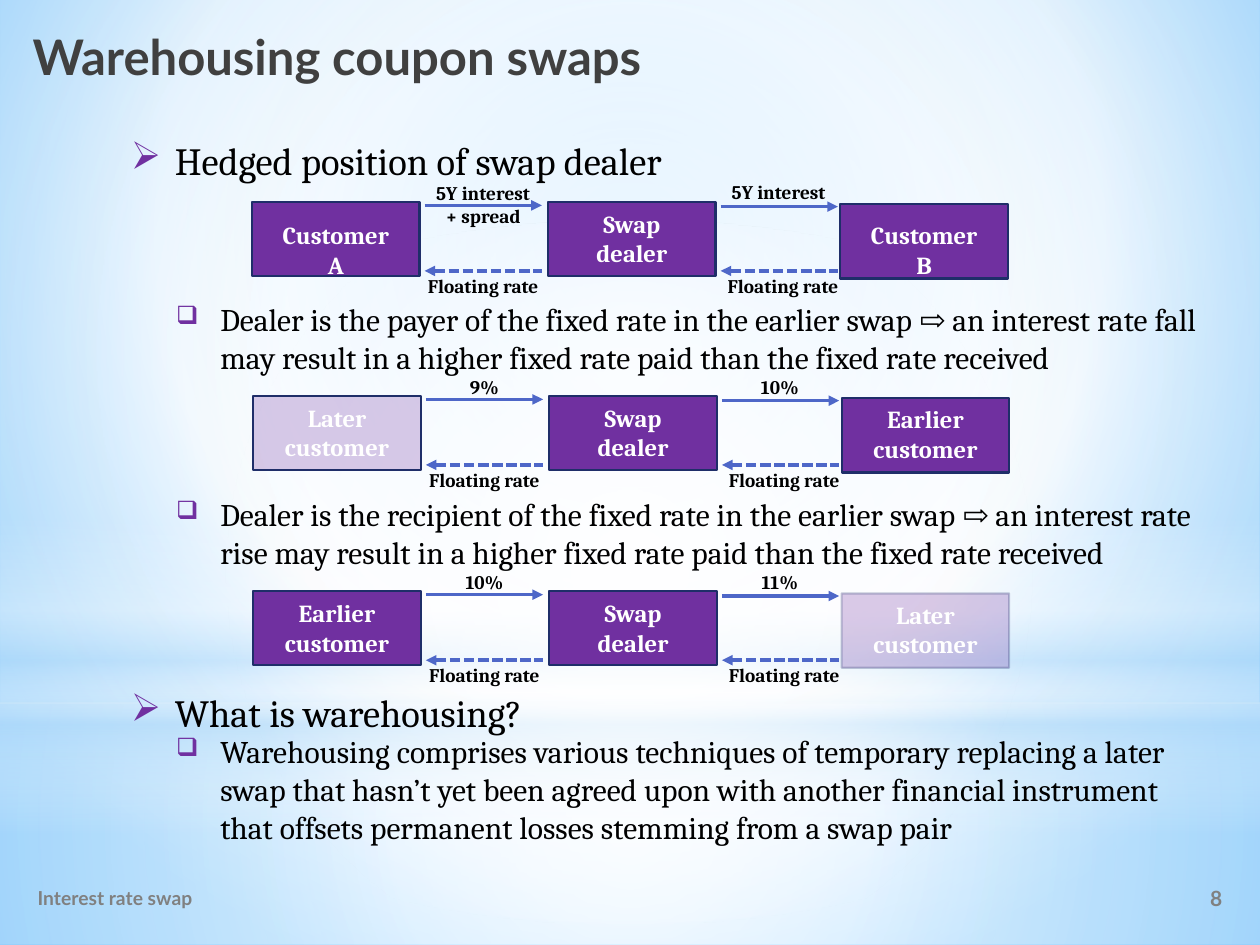
import lxml.etree
import pptx
import pptx.dml.color
import pptx.enum.dml
import pptx.enum.shapes
import pptx.enum.text
import pptx.oxml
import pptx.oxml.ns
import pptx.util

Inches = pptx.util.Inches
Pt = pptx.util.Pt
qn = pptx.oxml.ns.qn
ALIGN = pptx.enum.text.PP_ALIGN
ANCHOR = pptx.enum.text.MSO_ANCHOR
SHAPE = pptx.enum.shapes.MSO_SHAPE

COLORS = {
    "purple": "7030A0", "navy": "1F2E69", "arrow": "4E67C8", "white": "FFFFFF",
    "black": "000000", "title": "404040", "footer": "808080",
    "sky": "9ED5FF", "blue": "5BB9FF", "pale": "B4DCFA",
}
CENTER_FOCUS = (50, 50, 50, 50)


def rgb(name):
    return pptx.dml.color.RGBColor.from_string(COLORS[name])


def add_child(parent, tag, **attributes):
    child = lxml.etree.SubElement(parent, qn(tag))
    for key, value in attributes.items():
        child.set(key, str(value))
    return child


def set_gradient(solid_fill, stops, focus=None):
    """Replace a solid fill by a circular gradient, or a downward one without focus."""
    gradient = pptx.oxml.parse_xml(
        f'<a:gradFill {pptx.oxml.ns.nsdecls("a")} rotWithShape="1"/>')
    stop_list = add_child(gradient, "a:gsLst")
    for position, color, opacity in stops:
        stop = add_child(stop_list, "a:gs", pos=position * 1000)
        value = add_child(stop, "a:srgbClr", val=COLORS[color])
        if opacity < 100:
            add_child(value, "a:alpha", val=opacity * 1000)
    if focus:
        circle = add_child(gradient, "a:path", path="circle")
        sides = {side: part * 1000 for side, part in zip("ltrb", focus)}
        add_child(circle, "a:fillToRect", **sides)
    else:
        add_child(gradient, "a:lin", ang=90 * 60000, scaled=0)
    solid_fill.getparent().replace(solid_fill, gradient)


def add_backdrop(slide):
    slide.background.fill.solid()
    set_gradient(slide.element.xpath(".//p:bgPr/a:solidFill")[0],
                 [(0, "sky", 100), (60, "white", 100), (100, "blue", 100)], (20, 10, 20, 60))
    layers = [
        (SHAPE.RECTANGLE, 5.58, 1.92,
         [(0, "white", 91), (37, "white", 76), (100, "pale", 79)], CENTER_FOCUS),
        (SHAPE.RECTANGLE, 0, 5.58,
         [(0, "white", 89), (48, "white", 62), (100, "pale", 79)], CENTER_FOCUS),
        (SHAPE.RECTANGLE, 4.12, 2.5,
         [(0, "white", 0), (29, "white", 30), (45, "pale", 40), (55, "white", 26),
          (65, "pale", 60), (100, "white", 0)], None),
        (SHAPE.OVAL, 1.75, 5.58, [(0, "white", 100), (56, "white", 0)], CENTER_FOCUS),
    ]
    for kind, top, height, stops, focus in layers:
        shape = slide.shapes.add_shape(kind, 0, Inches(top), Inches(10), Inches(height))
        shape.shadow.inherit = False
        shape.line.fill.background()
        shape.fill.solid()
        set_gradient(shape.element.xpath("./p:spPr/a:solidFill")[0], stops, focus)


def write_text(frame, text, size=14, color="black", font="Cambria", bold=False,
               align=ALIGN.LEFT, anchor=ANCHOR.TOP, spacing=None, grow=True):
    frame.word_wrap = True
    auto_size = pptx.enum.text.MSO_AUTO_SIZE
    frame.auto_size = auto_size.SHAPE_TO_FIT_TEXT if grow else auto_size.NONE
    frame.vertical_anchor = anchor
    frame.text = text
    for paragraph in frame.paragraphs:
        paragraph.alignment = align
        if spacing:
            paragraph.line_spacing = Pt(spacing)
        for run in paragraph.runs:
            run.font.name = font
            run.font.size = Pt(size)
            run.font.bold = bold
            run.font.color.rgb = rgb(color)


def add_text(shapes, text, left, top, width, height, **text_format):
    box = shapes.add_textbox(Inches(left), Inches(top), Inches(width), Inches(height))
    write_text(box.text_frame, text, **text_format)
    return box


def add_bullet(slide, text, bullet, bullet_size, *place, size):
    box = add_text(slide.shapes, text, *place, size=size)
    properties = box.text_frame.paragraphs[0]._p.get_or_add_pPr()
    properties.set("marL", str(Inches(0.35)))
    properties.set("indent", str(-Inches(0.35)))
    add_child(add_child(properties, "a:buClr"), "a:srgbClr", val=COLORS["purple"])
    add_child(properties, "a:buSzPct", val=bullet_size * 1000)
    add_child(properties, "a:buChar", char=bullet)


def add_title(slide, text):
    title = slide.shapes.title
    title.left, title.top = Inches(0.16), Inches(0.16)
    title.width, title.height = Inches(5.63), Inches(0.71)
    write_text(title.text_frame, text, size=28, color="title", font="Lato",
               bold=True, grow=False)
    # The title has to lie in front of the backdrop
    slide.shapes.element.append(title.element)


def add_party(shapes, text, left, top, text_top, faded):
    """Draw a party to the swap; faded names what is see-through: fill, line or both."""
    box = shapes.add_shape(SHAPE.RECTANGLE, Inches(left), Inches(top),
                           Inches(1.33), Inches(0.59))
    box.shadow.inherit = False
    box.fill.solid()
    box.fill.fore_color.rgb = rgb("purple")
    box.line.color.rgb = rgb("navy")
    box.line.width = Pt(1.25)
    queries = {"fill": "./p:spPr/a:solidFill/a:srgbClr",
               "line": "./p:spPr/a:ln/a:solidFill/a:srgbClr"}
    for part in faded:
        add_child(box.element.xpath(queries[part])[0], "a:alpha", val=25000)
    add_text(shapes, text, left + 0.09, text_top, 1.15, 0.57, color="white",
             bold=True, align=ALIGN.CENTER)


def add_arrow(shapes, left, top, backward=False):
    """Draw a solid arrow to the right, or a dashed one to the left."""
    arrow = shapes.add_connector(pptx.enum.shapes.MSO_CONNECTOR.STRAIGHT, Inches(left),
                                 Inches(top), Inches(left + 0.93), Inches(top))
    arrow.line.color.rgb = rgb("arrow")
    arrow.line.width = Pt(2)
    if backward:
        arrow.line.dash_style = pptx.enum.dml.MSO_LINE.SQUARE_DOT
    add_child(arrow.line._get_or_add_ln(), "a:headEnd" if backward else "a:tailEnd",
              type="triangle")
    add_child(arrow.element.spPr, "a:effectLst")


def add_swap_pair(slide, left, top, parties, rates, faded=((), (), ()),
                  text_drop=(0.01, 0.01, 0.02)):
    """Draw three parties with a fixed and a floating flow in each gap."""
    shapes = slide.shapes.add_group_shape().shapes
    label = {"size": 11, "bold": True, "align": ALIGN.CENTER}
    for text, offset, drop, lower, parts in zip(
            parties, (0, 2.35, 4.67), (0, 0, 0.02), text_drop, faded):
        add_party(shapes, text, left + offset, top + drop, top + lower, parts)
    add_text(shapes, rates[0], left + 1.36, top - 0.21, 0.95, 0.29, **label)
    add_text(shapes, rates[1], left + 3.67, top - 0.17, 1.02, 0.24, spacing=10, **label)
    for offset, drop in ((1.37, 0.03), (3.72, 0.04)):
        add_arrow(shapes, left + offset, top + drop)
        add_arrow(shapes, left + offset, top + 0.55, backward=True)
    for offset in (1.27, 3.65):
        add_text(shapes, "Floating rate", left + offset, top + 0.57, 1.13, 0.24,
                 spacing=10, **label)


def main():
    presentation = pptx.Presentation()
    presentation.slide_width, presentation.slide_height = Inches(10), Inches(7.5)
    slide = presentation.slides.add_slide(presentation.slide_layouts[5])
    add_backdrop(slide)
    footer = {"color": "footer", "font": "Lato", "bold": True,
              "anchor": ANCHOR.MIDDLE, "grow": False}
    add_text(slide.shapes, "Interest rate swap", 0.2, 6.93, 3.62, 0.39, size=11, **footer)
    add_text(slide.shapes, "8", 7.83, 6.93, 1.97, 0.39, size=12, align=ALIGN.RIGHT, **footer)
    add_title(slide, "Warehousing coupon swaps")

    for text, top in (("Hedged position of swap dealer", 1.04),
                      ("What is warehousing?", 5.42)):
        add_bullet(slide, text, "➢", 100, 0.94, top, 5.63, 0.47, size=22)
    details = [
        ("Dealer is the payer of the fixed rate in the earlier swap ⇨ an interest rate fall "
         "may result in a higher fixed rate paid than the fixed rate received", 2.33, 0.71),
        ("Dealer is the recipient of the fixed rate in the earlier swap ⇨ an interest rate "
         "rise may result in a higher fixed rate paid than the fixed rate received", 3.88, 0.71),
        ("Warehousing comprises various techniques of temporary replacing a later swap that "
         "hasn’t yet been agreed upon with another financial instrument that offsets "
         "permanent losses stemming from a swap pair", 5.76, 1.01),
    ]
    for text, top, height in details:
        add_bullet(slide, text, "❑", 80, 1.3, top, 8.43, height, size=18)

    dealer, later, earlier = "Swap\ndealer", "Later\ncustomer", "Earlier\ncustomer"
    add_swap_pair(slide, 2, 1.6, ("Customer A", dealer, "Customer B"),
                  ("5Y interest\n+ spread", "5Y interest"), text_drop=(0.1, 0.01, 0.1))
    add_swap_pair(slide, 2.01, 3.14, (later, dealer, earlier), ("9%", "10%"),
                  faded=(("fill",), (), ()))
    add_swap_pair(slide, 2.01, 4.69, (earlier, dealer, later), ("10%", "11%"),
                  faded=((), (), ("fill", "line")))
    presentation.save("out.pptx")


if __name__ == "__main__":
    main()
